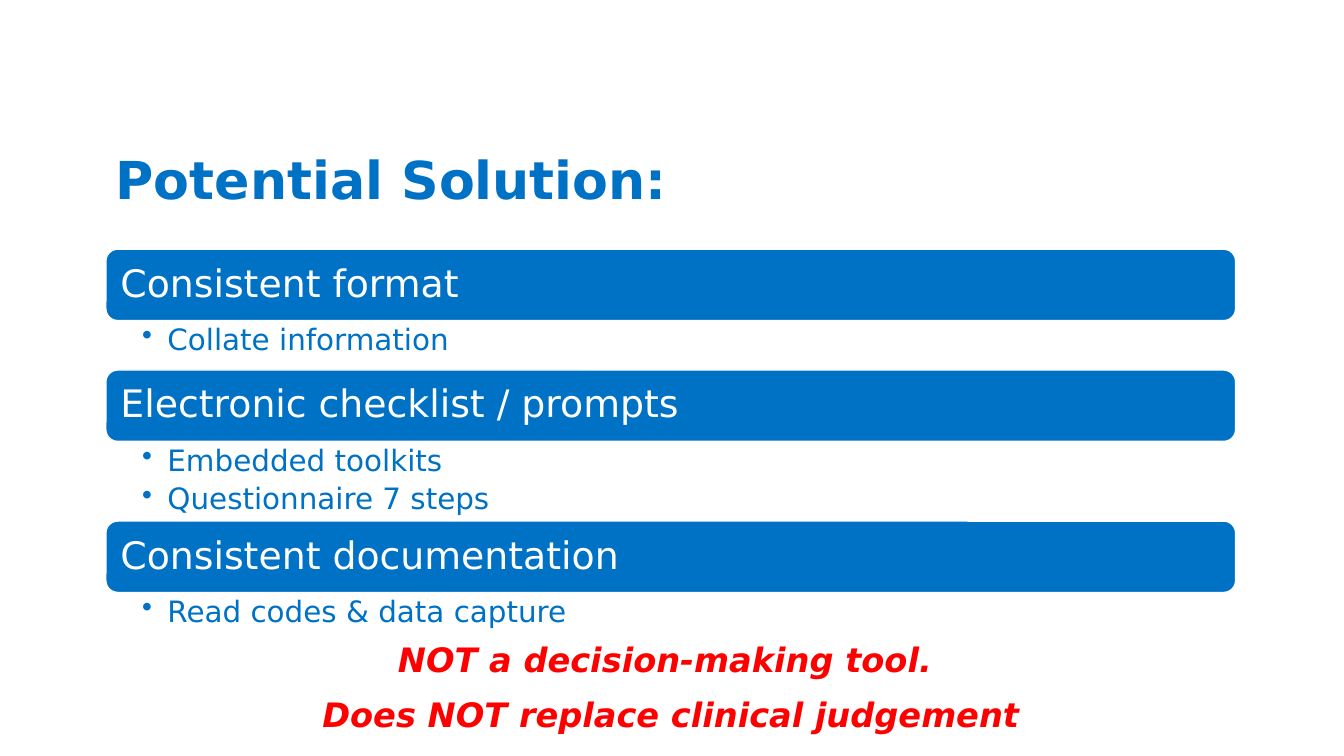
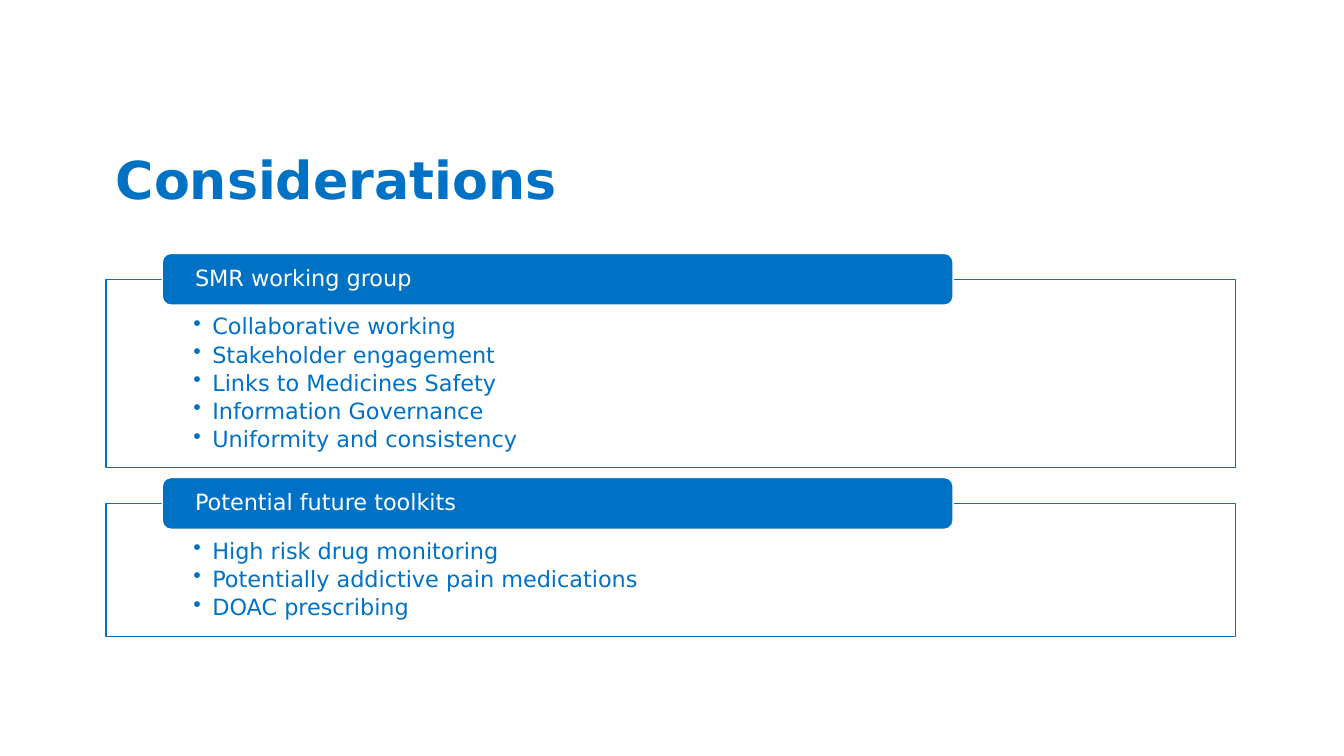
from lxml import etree
from pptx import Presentation
from pptx.dml.color import RGBColor
from pptx.enum.shapes import MSO_SHAPE
from pptx.enum.text import MSO_ANCHOR, PP_ALIGN
from pptx.oxml.ns import qn
from pptx.util import Pt

# Shared style
FONT = "DejaVu Sans"
BLUE, WHITE, RED = "0072C6", "FFFFFF", "FF0000"
LEFT, WIDTH = 75.6, 807


def color(hex_string):
    return RGBColor.from_string(hex_string)


def write(shape, lines, size, ink, insets=(7.2, 3.6, 7.2, 3.6), anchor=MSO_ANCHOR.TOP,
          align=PP_ALIGN.LEFT, bold=False, italic=False, gap=0, bullet_indent=0):
    """Fill a shape with paragraphs, separated by gap and optionally bulleted."""
    frame = shape.text_frame
    frame.word_wrap = True
    frame.vertical_anchor = anchor
    frame.margin_left, frame.margin_top, frame.margin_right, frame.margin_bottom = map(Pt, insets)
    frame.text = "\n".join(lines)
    for index, paragraph in enumerate(frame.paragraphs):
        paragraph.alignment = align
        paragraph.line_spacing = 0.9
        if index:
            paragraph.space_before = Pt(gap)
        if bullet_indent:
            properties = paragraph._p.get_or_add_pPr()
            properties.set("marL", str(Pt(bullet_indent)))
            properties.set("indent", str(-Pt(bullet_indent)))
            etree.SubElement(properties, qn("a:buChar")).set("char", "•")
        for run in paragraph.runs:
            run.font.name = FONT
            run.font.size = Pt(size)
            run.font.bold = bold
            run.font.italic = italic
            run.font.color.rgb = color(ink)


def add_box(slide, kind, box, fill, line):
    shape = slide.shapes.add_shape(kind, *map(Pt, box))
    shape.shadow.inherit = False
    shape.fill.solid()
    shape.fill.fore_color.rgb = color(fill)
    shape.line.color.rgb = color(line)
    shape.line.width = Pt(1)
    return shape


def add_text(slide, box, lines, size, ink, **style):
    write(slide.shapes.add_textbox(*map(Pt, box)), lines, size, ink, **style)


def add_heading_bar(slide, box, text, size, insets):
    bar = add_box(slide, MSO_SHAPE.ROUNDED_RECTANGLE, box, BLUE, WHITE)
    write(bar, [text], size, WHITE, insets=insets, anchor=MSO_ANCHOR.MIDDLE)


def add_titled_slide(presentation, title):
    slide = presentation.slides.add_slide(presentation.slide_layouts[6])
    add_text(slide, (LEFT, 80, WIDTH, 74), [title], 37.3, BLUE,
             anchor=MSO_ANCHOR.BOTTOM, bold=True)
    return slide


def add_bar_section(slide, left, top, width, heading, bullets):
    """Full-width bar with bullets below; returns the bottom edge."""
    bar_height = 51
    add_heading_bar(slide, (left, top, width, bar_height), heading, 27, (8, 8, 8, 8))
    bullets_top = top + bar_height
    bullets_height = 13.7 + 21.6 * len(bullets)
    add_text(slide, (left, bullets_top, width, bullets_height), bullets, 21, BLUE,
             insets=(26, 3, 15, 3), gap=5, bullet_indent=18)
    return bullets_top + bullets_height


def add_tab_section(slide, left, top, width, heading, bullets):
    """Outlined frame with a tab centred on its top edge; returns the bottom edge."""
    tab_height = 37
    frame_top = top + tab_height / 2
    frame_height = 35.6 + 19.8 * len(bullets)
    frame = add_box(slide, MSO_SHAPE.RECTANGLE, (left, frame_top, width, frame_height), WHITE, BLUE)
    fill_color = frame._element.spPr.find(qn("a:solidFill"))[0]
    etree.SubElement(fill_color, qn("a:alpha")).set("val", "90000")
    write(frame, bullets, 16, BLUE, insets=(62.6, 26, 62.6, 8.6), gap=2.8, bullet_indent=13.5)
    add_heading_bar(slide, (left + width * 0.05, top, width * 0.7, tab_height),
                    heading, 16, (21.6, 0, 21.6, 0))
    return frame_top + frame_height


def build_solution(presentation):
    slide = add_titled_slide(presentation, "Potential Solution:")
    top = 178
    for heading, bullets in [
        ("Consistent format", ["Collate information"]),
        ("Electronic checklist / prompts", ["Embedded toolkits", "Questionnaire 7 steps"]),
        ("Consistent documentation", ["Read codes & data capture"]),
    ]:
        top = add_bar_section(slide, LEFT, top, WIDTH, heading, bullets)
    # Warning
    add_text(slide, (76.3, 456, 805.7, 37.4),
             ["NOT a decision-making tool. ", "Does NOT replace clinical judgement"],
             24, RED, align=PP_ALIGN.CENTER, bold=True, italic=True, gap=13.3)


def build_considerations(presentation):
    slide = add_titled_slide(presentation, "Considerations")
    top = 181
    for heading, bullets in [
        ("SMR working group", [
            "Collaborative working", "Stakeholder engagement", "Links to Medicines Safety",
            "Information Governance", "Uniformity and consistency"]),
        ("Potential future toolkits", [
            "High risk drug monitoring", "Potentially addictive pain medications",
            "DOAC prescribing"]),
    ]:
        top = add_tab_section(slide, LEFT, top, WIDTH, heading, bullets) + 7


def main():
    presentation = Presentation()
    presentation.slide_width, presentation.slide_height = Pt(960), Pt(540)
    build_solution(presentation)
    build_considerations(presentation)
    presentation.save("out.pptx")


if __name__ == "__main__":
    main()
